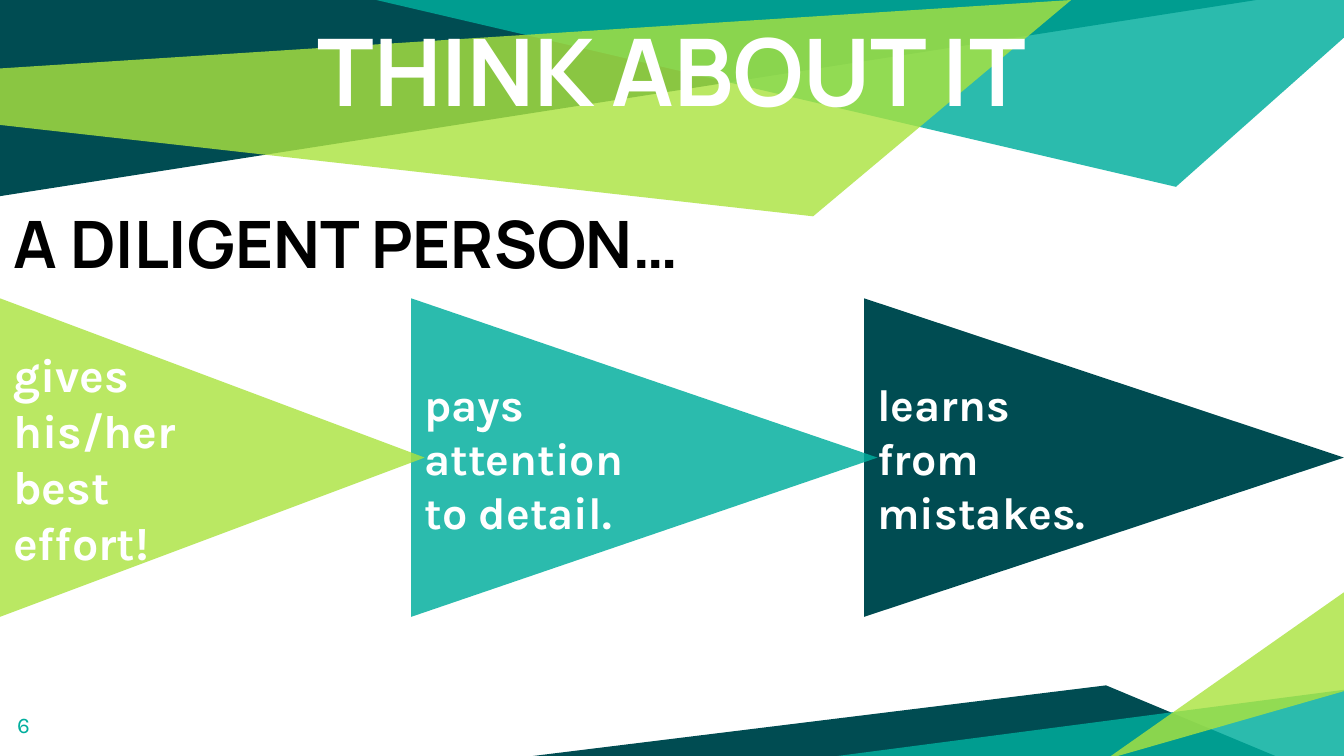
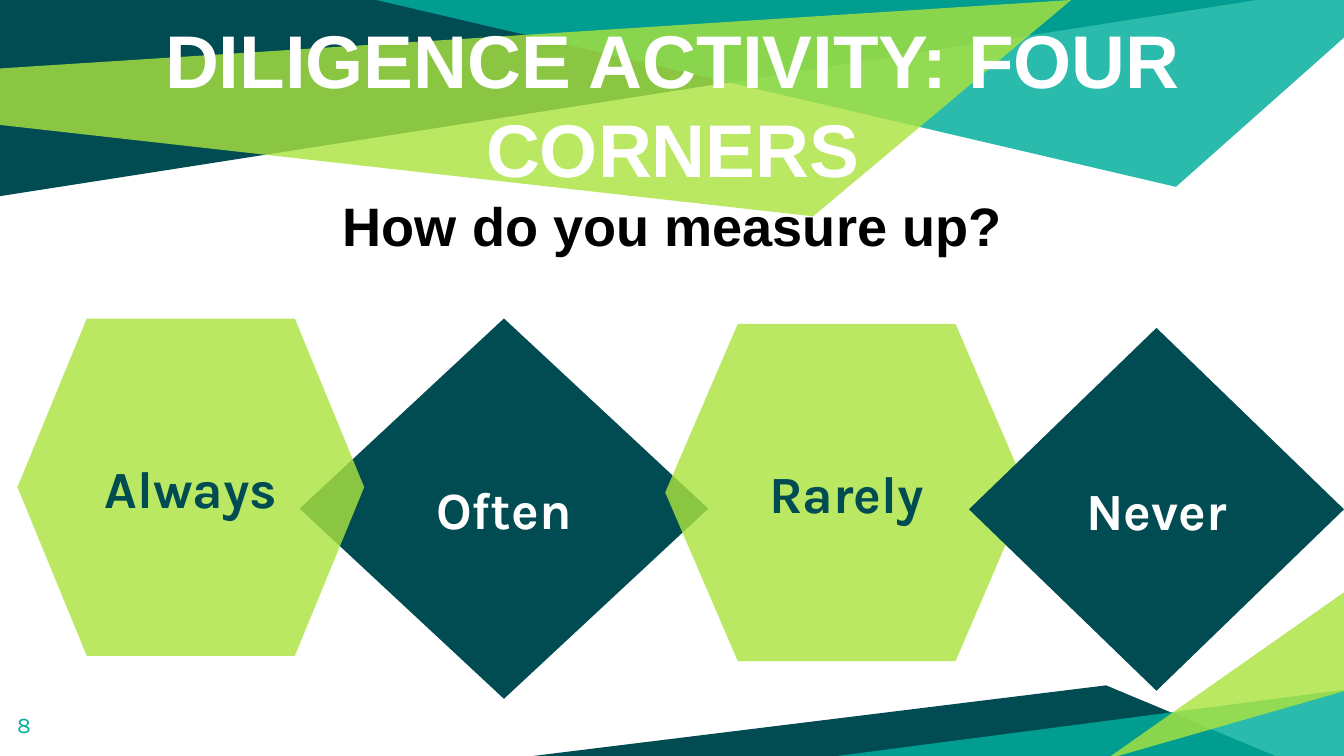
from dataclasses import dataclass

from lxml import etree
from pptx import Presentation
from pptx.dml.color import RGBColor
from pptx.enum.shapes import MSO_SHAPE
from pptx.enum.text import MSO_ANCHOR, MSO_AUTO_SIZE, PP_ALIGN
from pptx.oxml.ns import qn
from pptx.util import Inches, Pt

LEFT, CENTER = PP_ALIGN.LEFT, PP_ALIGN.CENTER
TOP, MIDDLE = MSO_ANCHOR.TOP, MSO_ANCHOR.MIDDLE
NO_AUTOFIT = MSO_AUTO_SIZE.NONE
ARROW, DIAMOND = MSO_SHAPE.PENTAGON, MSO_SHAPE.DIAMOND
HEXAGON = MSO_SHAPE.FLOWCHART_PREPARATION


@dataclass(frozen=True)
class Theme:
    dark: str = "004C52"
    teal: str = "00AE9D"
    lime: str = "ABE33F"
    white: str = "FFFFFF"
    black: str = "000000"
    heading_font: str = "Manrope"
    plain_font: str = "Arial"
    body_font: str = "Karla"
    title_size: int = 50
    long_title_size: int = 40
    heading_size: int = 35
    question_size: int = 29
    answer_size: int = 28
    trait_size: int = 24
    first_trait_size: int = 25
    number_size: int = 12


theme = Theme()
opacity = {theme.dark: 100, theme.teal: 83, theme.lime: 81}


def paint(shape, color):
    """Fill a shape with a theme colour at its opacity, without line or shadow."""
    shape.shadow.inherit = False
    shape.line.fill.background()
    shape.fill.solid()
    shape.fill.fore_color.rgb = RGBColor.from_string(color)
    if opacity[color] < 100:
        srgb = shape.element.spPr.find(".//" + qn("a:srgbClr"))
        etree.SubElement(srgb, qn("a:alpha"), val=str(opacity[color] * 1000))


def write(box, text, size, color, font=theme.body_font, bold=True,
          align=LEFT, anchor=TOP, new_paragraph=False):
    frame = box.text_frame
    frame.auto_size = NO_AUTOFIT
    frame.word_wrap = True
    frame.vertical_anchor = anchor
    frame.margin_left = frame.margin_right = Inches(0.1)
    frame.margin_top = frame.margin_bottom = Inches(0.1)
    para = frame.add_paragraph() if new_paragraph else frame.paragraphs[0]
    para.alignment = align
    para.space_before = Pt(0)
    span = para.add_run()
    span.text = text
    span.font.name = font
    span.font.size = Pt(size)
    span.font.bold = bold
    span.font.color.rgb = RGBColor.from_string(color)


deck = Presentation()
deck.slide_width, deck.slide_height = Inches(10), Inches(10 * 9 / 16)
layout = deck.slide_layouts[5]
think_slide = deck.slides.add_slide(layout)
corners_slide = deck.slides.add_slide(layout)

# Bands shared by both slides, kept behind the layout's title
bands = [
    (theme.dark, [(0, 0), (0, 1.46), (9.35, 0)]),
    (theme.teal, [(2.8, 0), (8.75, 1.39), (10, 0.28), (10, 0)]),
    (theme.lime, [(-0.01, 0.51), (0, 0.93), (6.05, 1.61), (7.97, 0)]),
    (theme.dark, [(3.93, 5.63), (9.5, 5.63), (8.23, 5.1)]),
    (theme.teal, [(10.02, 5.13), (10.02, 5.65), (6.04, 5.65)]),
    (theme.lime, [(10.01, 5.14), (10.01, 4.4), (8.23, 5.65)]),
]
layout_title = layout.placeholders[0].element
for index, (color, corners) in enumerate(bands):
    points = [(Inches(x), Inches(y)) for x, y in corners]
    builder = think_slide.shapes.build_freeform(*points[0], scale=1.0)
    builder.add_line_segments(points[1:], close=True)
    band = builder.convert_to_shape()
    paint(band, color)
    band.element.nvSpPr.cNvPr.id = 20 + index
    layout_title.addprevious(band.element)

# Titles and page numbers
pages = [
    (think_slide, "6", 0.97, 8.06, 0.94, "THINK ABOUT IT",
     theme.title_size, theme.heading_font),
    (corners_slide, "8", 0.3, 9.41, 0.86, "DILIGENCE ACTIVITY: FOUR CORNERS",
     theme.long_title_size, theme.plain_font),
]
for page, number, left, width, height, text, size, font in pages:
    title = page.shapes.title
    title.left, title.top = Inches(left), Inches(0)
    title.width, title.height = Inches(width), Inches(height)
    write(title, text, size, theme.white, font=font, align=CENTER)
    number_box = page.shapes.add_textbox(
        Inches(0.03), Inches(5.19), Inches(0.6), Inches(0.43))
    write(number_box, number, theme.number_size, theme.teal, bold=False)

# Think about it: three arrows, each overlapping the one to its right
traits = [
    ("learns from mistakes.", 6.43, 3.57, theme.dark, theme.trait_size, 2.12),
    ("pays attention to detail.", 3.06, 3.47, theme.teal, theme.trait_size, 2.12),
    ("gives his/her best effort!", 0, 3.16, theme.lime, theme.first_trait_size, 1.53),
]
for text, left, width, color, size, point in traits:
    arrow = think_slide.shapes.add_shape(
        ARROW, Inches(left), Inches(2.22), Inches(width), Inches(2.37))
    arrow.adjustments[0] = point
    paint(arrow, color)
    write(arrow, text, size, theme.white, anchor=MIDDLE)

heading = think_slide.shapes.add_textbox(
    Inches(0), Inches(1.41), Inches(8.06), Inches(0.94))
write(heading, "A DILIGENT PERSON…", theme.heading_size, theme.black,
      font=theme.heading_font)

# Four corners: the question and its four answers
write(corners_slide.shapes.title, "How do you measure up?", theme.question_size,
      theme.black, font=theme.plain_font, align=CENTER, new_paragraph=True)
answers = [
    ("Often", DIAMOND, 2.23, 2.37, 3.04, 2.83, theme.dark, theme.white),
    ("Always", HEXAGON, 0.13, 2.37, 2.58, 2.51, theme.lime, theme.dark),
    ("Rarely", HEXAGON, 4.95, 2.41, 2.7, 2.51, theme.lime, theme.dark),
    ("Never", DIAMOND, 7.21, 2.44, 2.79, 2.7, theme.dark, theme.white),
]
for text, kind, left, top, width, height, color, text_color in answers:
    answer = corners_slide.shapes.add_shape(
        kind, Inches(left), Inches(top), Inches(width), Inches(height))
    paint(answer, color)
    write(answer, text, theme.answer_size, text_color, align=CENTER, anchor=MIDDLE)

deck.save("out.pptx")
